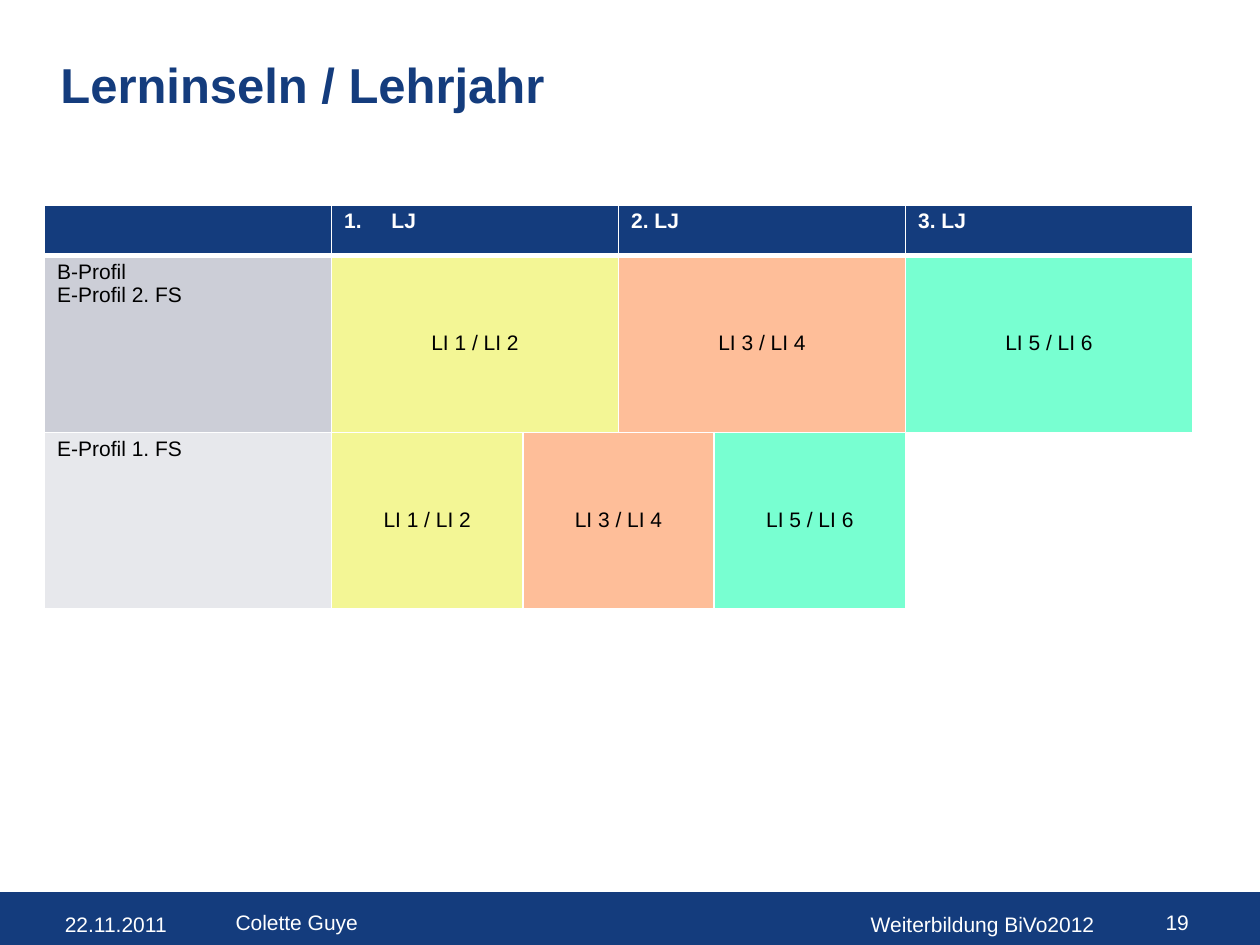
from lxml import etree
from pptx import Presentation
from pptx.dml.color import RGBColor
from pptx.enum import shapes, text
from pptx.oxml import ns
from pptx.util import Pt

NAVY = RGBColor(0x14, 0x3C, 0x7D)
WHITE = RGBColor(0xFF, 0xFF, 0xFF)
BLACK = RGBColor(0, 0, 0)
GREY = RGBColor(0xCC, 0xCE, 0xD7)
LIGHT_GREY = RGBColor(0xE7, 0xE8, 0xEC)
YELLOW = RGBColor(0xF3, 0xF6, 0x95)
ORANGE = RGBColor(0xFE, 0xBE, 0x99)
MINT = RGBColor(0x78, 0xFF, 0xD1)

COLUMN_UNITS = [6, 4, 2, 2, 4, 6]
ROW_HEIGHTS = [29, 101, 101]
# Each cell: first column, last column, text, fill
HEADER_CELLS = [(0, 0, "", NAVY), (1, 2, "LJ", NAVY), (3, 4, "2. LJ", NAVY), (5, 5, "3. LJ", NAVY)]
PROFILE_ROWS = [
    [(0, 0, "B-Profil\nE-Profil 2. FS", GREY), (1, 2, "LI 1 / LI 2", YELLOW),
     (3, 4, "LI 3 / LI 4", ORANGE), (5, 5, "LI 5 / LI 6", MINT)],
    [(0, 0, "E-Profil 1. FS", LIGHT_GREY), (1, 1, "LI 1 / LI 2", YELLOW),
     (2, 3, "LI 3 / LI 4", ORANGE), (4, 4, "LI 5 / LI 6", MINT), (5, 5, "", None)],
]


def set_font(paragraph, size, color, bold=False):
    font = paragraph.font
    font.name, font.size, font.bold = "Arial", Pt(size), bold
    font.color.rgb = color


def add_label(slide, box, content, size, color, bold=False,
              align=text.PP_ALIGN.LEFT, anchor=text.MSO_ANCHOR.MIDDLE):
    frame = slide.shapes.add_textbox(*map(Pt, box)).text_frame
    frame.word_wrap = True
    frame.vertical_anchor = anchor
    paragraph = frame.paragraphs[0]
    paragraph.text = content
    paragraph.alignment = align
    set_font(paragraph, size, color, bold)


def add_footer(slide, left, top, width, height):
    bar = slide.shapes.add_shape(shapes.MSO_SHAPE.RECTANGLE, Pt(left), Pt(top), Pt(width), Pt(height))
    bar.shadow.inherit = False
    bar.fill.solid()
    bar.fill.fore_color.rgb = NAVY
    bar.line.color.rgb = NAVY
    bar.line.width = Pt(0.75)
    for offset, drop, label_width, content, align in [
        (33, 6.5, 78, "22.11.2011", text.PP_ALIGN.LEFT),
        (130.5, 5.5, 323, "Colette Guye", text.PP_ALIGN.LEFT),
        (493.5, 6.5, 158, "Weiterbildung BiVo2012", text.PP_ALIGN.LEFT),
        (651, 5.5, 38.5, "19", text.PP_ALIGN.RIGHT),
    ]:
        add_label(slide, (left + offset, top + drop, label_width, 23), content, 12, WHITE, align=align)


def add_borders(cell, bottom_width):
    properties = cell._tc.get_or_add_tcPr()
    for index, side in enumerate("LRTB"):
        width = bottom_width if side == "B" else 1
        line = etree.Element(ns.qn(f"a:ln{side}"), w=str(Pt(width)))
        fill = etree.SubElement(line, ns.qn("a:solidFill"))
        etree.SubElement(fill, ns.qn("a:srgbClr"), val=str(WHITE))
        properties.insert(index, line)


def number_paragraph(paragraph):
    properties = paragraph._p.get_or_add_pPr()
    properties.set("marL", str(Pt(27)))
    properties.set("indent", str(-Pt(27)))
    etree.SubElement(properties, ns.qn("a:buFont"), typeface="+mj-lt")
    etree.SubElement(properties, ns.qn("a:buAutoNum"), type="arabicPeriod")


def fill_row(table, row, cells):
    is_header = row == 0
    for first, last, content, color in cells:
        cell = table.cell(row, first)
        if last > first:
            cell.merge(table.cell(row, last))
        cell.text = content
        is_island = not is_header and first > 0
        cell.vertical_anchor = text.MSO_ANCHOR.MIDDLE if is_island else text.MSO_ANCHOR.TOP
        for paragraph in cell.text_frame.paragraphs:
            if content == "LJ":
                number_paragraph(paragraph)
            paragraph.alignment = text.PP_ALIGN.CENTER if is_island else text.PP_ALIGN.LEFT
            paragraph.line_spacing = 0.95
            set_font(paragraph, 12, WHITE if is_header else BLACK, is_header)
        for column in range(first, last + 1):
            part = table.cell(row, column)
            if color is None:
                part.fill.background()
            else:
                part.fill.solid()
                part.fill.fore_color.rgb = color
            add_borders(part, 3 if is_header else 1)


def add_island_table(slide, left, top, width):
    frame = slide.shapes.add_table(len(ROW_HEIGHTS), len(COLUMN_UNITS), Pt(left), Pt(top),
                                   Pt(width), Pt(sum(ROW_HEIGHTS)))
    table = frame.table
    table.horz_banding = False
    for column, units in zip(table.columns, COLUMN_UNITS):
        column.width = Pt(width * units / sum(COLUMN_UNITS))
    for row, height in zip(table.rows, ROW_HEIGHTS):
        row.height = Pt(height)
    for row, cells in enumerate([HEADER_CELLS, *PROFILE_ROWS]):
        fill_row(table, row, cells)


def main():
    presentation = Presentation()
    presentation.slide_width, presentation.slide_height = Pt(720), Pt(540)
    slide = presentation.slides.add_slide(presentation.slide_layouts[6])
    add_footer(slide, -3, 510, 723, 30)
    add_label(slide, (27.5, 27.5, 525.5, 67), "Lerninseln / Lehrjahr", 28, NAVY, True,
              anchor=text.MSO_ANCHOR.TOP)
    add_island_table(slide, 25.5, 117, 656)
    presentation.save("out.pptx")


if __name__ == "__main__":
    main()
